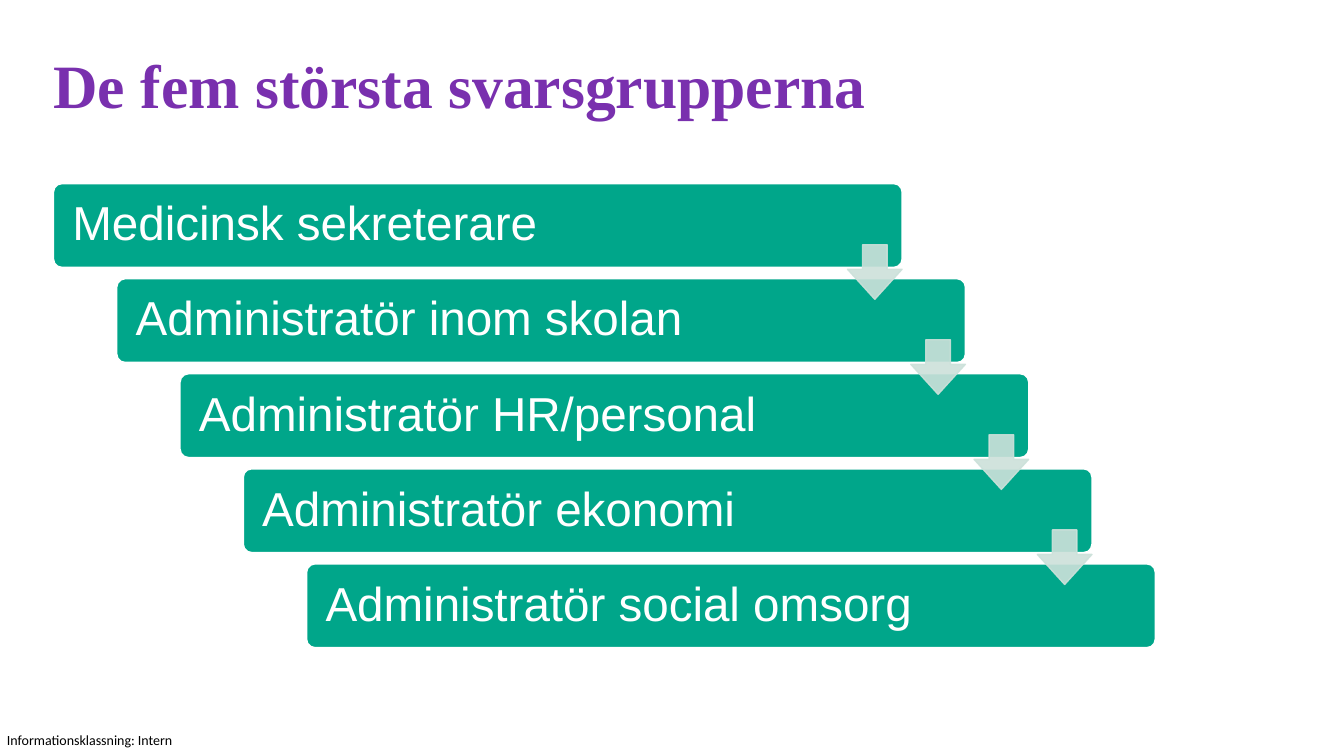
from lxml import etree
from pptx import Presentation
from pptx.dml.color import RGBColor
from pptx.enum.shapes import MSO_SHAPE
from pptx.enum.text import MSO_ANCHOR, PP_ALIGN
from pptx.oxml.ns import qn
from pptx.util import Pt

BAR, ARROW = MSO_SHAPE.ROUNDED_RECTANGLE, MSO_SHAPE.DOWN_ARROW
TOP, MIDDLE, LEFT = MSO_ANCHOR.TOP, MSO_ANCHOR.MIDDLE, PP_ALIGN.LEFT

TITLE = "De fem största svarsgrupperna"
FOOTER = "Informationsklassning: Intern"
GROUPS = [
    "Medicinsk sekreterare",
    "Administratör inom skolan",
    "Administratör HR/personal",
    "Administratör ekonomi",
    "Administratör social omsorg",
]
COLORS = {"purple": "7930AE", "green": "00A68A", "mint": "CCE1DA",
          "white": "FFFFFF", "black": "000000"}
TITLE_FONT = {"name": "Times New Roman", "size": Pt(44), "bold": True}
BAR_FONT = {"name": "Arial", "size": Pt(34)}
FOOTER_FONT = {"name": "Calibri", "size": Pt(10)}

# Staircase geometry, in points
BAR_X, BAR_Y, BAR_W, BAR_H = 38.2, 131.2, 606.2, 59.8
STEP_X, STEP_Y = 45.2, 67.9
ARROW_SIZE, ARROW_DROP = 39, 43.6
ARROW_OPACITY = 90


def rgb(name):
    return RGBColor.from_string(COLORS[name])


def write(shape, text, font, color, anchor=TOP, margins=(0, 0, 0, 0), wrap=True):
    tf = shape.text_frame
    sides = ("margin_left", "margin_top", "margin_right", "margin_bottom")
    for side, value in zip(sides, margins):
        setattr(tf, side, Pt(value))
    tf.word_wrap = wrap
    tf.vertical_anchor = anchor
    p = tf.paragraphs[0]
    p.alignment = LEFT
    r = p.add_run()
    r.text = text
    for key, value in font.items():
        setattr(r.font, key, value)
    r.font.color.rgb = rgb(color)
    return p


def add_block(s, kind, box, adjustments, fill, line):
    sp = s.shapes.add_shape(kind, *map(Pt, box))
    sp.shadow.inherit = False
    for i, value in enumerate(adjustments):
        sp.adjustments[i] = value
    sp.fill.solid()
    sp.fill.fore_color.rgb = rgb(fill)
    sp.line.color.rgb = rgb(line)
    sp.line.width = Pt(1)
    return sp


def set_opacity(sp, percent):
    """Make both the fill and the outline of a shape translucent."""
    for color in sp.element.spPr.iter(qn("a:srgbClr")):
        etree.SubElement(color, qn("a:alpha")).set("val", str(percent * 1000))


def main():
    prs = Presentation()
    prs.slide_width, prs.slide_height = Pt(960), Pt(540)
    s = prs.slides.add_slide(prs.slide_layouts[6])

    footer = s.shapes.add_textbox(Pt(5), Pt(522.7), Pt(121), Pt(12.2))
    write(footer, FOOTER, FOOTER_FONT, "black", wrap=False)
    title = s.shapes.add_textbox(Pt(38.2), Pt(28.8), Pt(765.4), Pt(102.2))
    write(title, TITLE, TITLE_FONT, "purple", margins=(0, 5, 0, 0))

    for i, group in enumerate(GROUPS):
        box = (BAR_X + i * STEP_X, BAR_Y + i * STEP_Y, BAR_W, BAR_H)
        bar = add_block(s, BAR, box, [0.1], "green", "white")
        p = write(bar, group, BAR_FONT, "white", MIDDLE, (11.8, 10, 10, 10))
        p.line_spacing = 0.9

    for i in range(len(GROUPS) - 1):
        x = BAR_X + i * STEP_X + BAR_W - ARROW_SIZE
        y = BAR_Y + i * STEP_Y + ARROW_DROP
        arrow = add_block(s, ARROW, (x, y, ARROW_SIZE, ARROW_SIZE),
                          [0.45, 0.55], "mint", "mint")
        # A down arrow takes its head length first, then its shaft width
        set_opacity(arrow, ARROW_OPACITY)

    prs.save("out.pptx")


if __name__ == "__main__":
    main()
